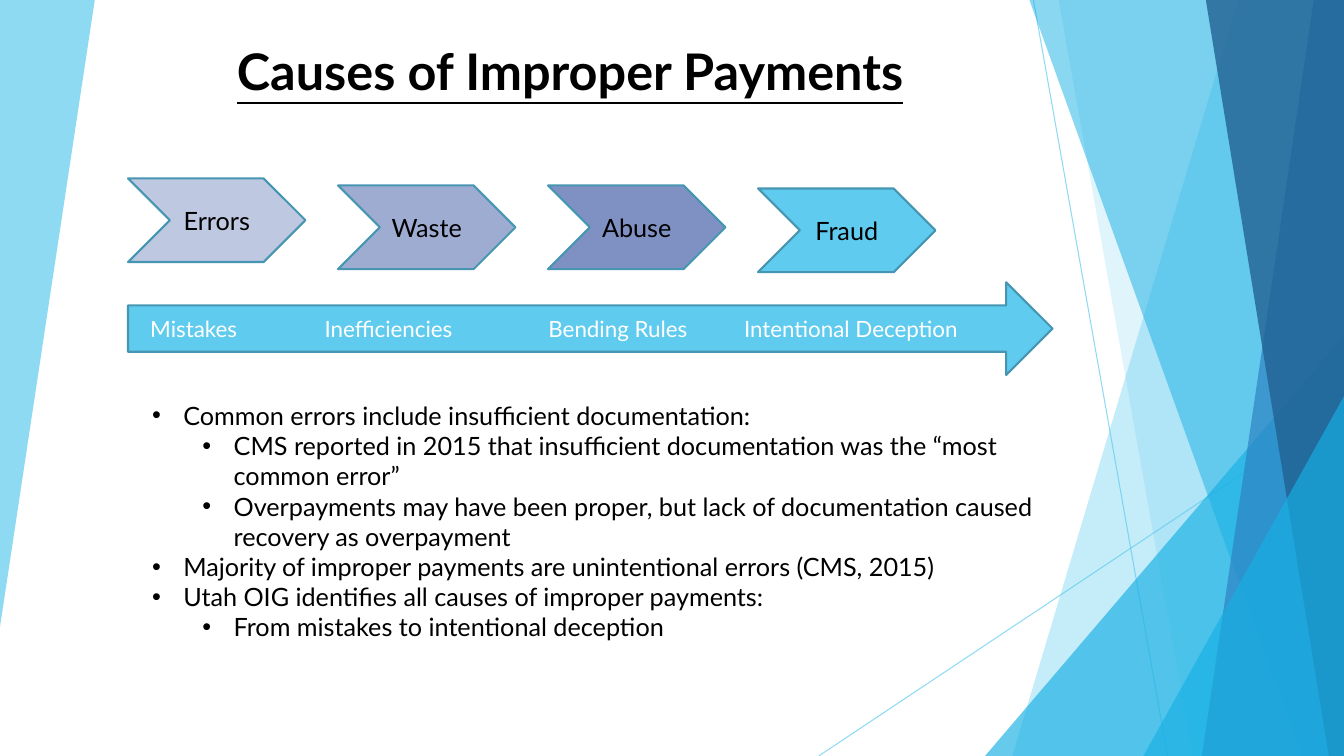
from lxml.etree import SubElement
from pptx import Presentation
from pptx.dml.color import RGBColor
from pptx.enum.shapes import MSO_CONNECTOR, MSO_SHAPE
from pptx.enum.text import MSO_ANCHOR, PP_ALIGN
from pptx.oxml.ns import qn
from pptx.util import Inches, Pt

BLACK = RGBColor(0x00, 0x00, 0x00)
WHITE = RGBColor(0xFF, 0xFF, 0xFF)
SKY = RGBColor(0x5F, 0xCB, 0xEF)
CYAN = RGBColor(0x17, 0xB0, 0xE4)
BLUE = RGBColor(0x2E, 0x83, 0xC3)
NAVY = RGBColor(0x22, 0x62, 0x92)
VIOLET = RGBColor(0x60, 0x76, 0xB4)
OUTLINE = RGBColor(0x46, 0x96, 0xB1)
FONT = "Lato"
W, H = 13.33, 7.5


def set_opacity(shape, percent):
    """Apply opacity to the first colour of the shape: its fill, or a connector's line."""
    color = shape._element.spPr.find(".//" + qn("a:srgbClr"))
    SubElement(color, qn("a:alpha")).set("val", str(percent * 1000))


def style_text(p, size, color):
    for r in p.runs:
        r.font.name = FONT
        r.font.size = Pt(size)
        r.font.color.rgb = color


prs = Presentation()
prs.slide_width, prs.slide_height = Inches(W), Inches(H)
slide = prs.slides.add_slide(prs.slide_layouts[5])
shapes = slide.shapes

# Thin lines behind the facets
for x1, y1, x2, y2 in [(10.25, 0, 11.58, H), (W, 4.03, 8.12, H)]:
    line = shapes.add_connector(
        MSO_CONNECTOR.STRAIGHT, Inches(x1), Inches(y1), Inches(x2), Inches(y2))
    line.line.color.rgb = SKY
    line.line.width = Pt(0.75)
    set_opacity(line, 70)
    SubElement(line._element.spPr, qn("a:effectLst"))

# Translucent facets: each group of polygons is topped by a corner triangle
facet_groups = [
    ([([(0, 0), (0.94, 0), (0, 6.22)], SKY, 70),
      ([(12.28, 0), (W, 0), (W, H), (10.04, H)], SKY, 36),
      ([(10.5, 0), (W, 0), (W, H), (11.83, H)], SKY, 20)],
     (9.77, 3.33)),
    ([([(10.21, 0), (W, 0), (W, H), (12.91, H)], CYAN, 50),
      ([(13.03, 0), (W, 0), (W, H), (11.92, H)], BLUE, 70),
      ([(11.96, 0), (W, 0), (W, H), (13.18, H)], NAVY, 80)],
     (11.34, 3.93)),
]
for polygons, (left, top) in facet_groups:
    facets = []
    for points, color, opacity in polygons:
        start, *rest = [(Inches(x), Inches(y)) for x, y in points]
        builder = shapes.build_freeform(*start)
        builder.add_line_segments(rest, close=True)
        facets.append((builder.convert_to_shape(), color, opacity))
    triangle = shapes.add_shape(
        MSO_SHAPE.ISOSCELES_TRIANGLE,
        Inches(left), Inches(top), Inches(W - left), Inches(H - top))
    triangle.adjustments[0] = 1
    facets.append((triangle, CYAN, 66))
    for sp, color, opacity in facets:
        sp.shadow.inherit = False
        sp.fill.solid()
        sp.fill.fore_color.rgb = color
        sp.line.fill.background()
        set_opacity(sp, opacity)

# Title
title = shapes.title
title.left, title.top = Inches(1.74), Inches(0.34)
title.width, title.height = Inches(7.83), Inches(0.71)
tf = title.text_frame
tf.text = "Causes of Improper Payments"
tf.vertical_anchor = MSO_ANCHOR.MIDDLE
p = tf.paragraphs[0]
p.alignment = PP_ALIGN.CENTER
style_text(p, 36, BLACK)
p.runs[0].font.bold = True
p.runs[0].font.underline = True

# Bulleted explanation
body = shapes.add_textbox(Inches(0.91), Inches(3.92), Inches(9.5), Inches(2.52))
tf = body.text_frame
tf.word_wrap = True
bullets = [
    (0, "Common errors include insufficient documentation:"),
    (1, "CMS reported in 2015 that insufficient documentation was the “most common error”"),
    (1, "Overpayments may have been proper, but lack of documentation caused "
        "recovery as overpayment"),
    (0, "Majority of improper payments are unintentional errors (CMS, 2015)"),
    (0, "Utah OIG identifies all causes of improper payments:"),
    (1, "From mistakes to intentional deception"),
]
for i, (level, text) in enumerate(bullets):
    p = tf.add_paragraph() if i else tf.paragraphs[0]
    p.text = text
    p.level = level
    style_text(p, 18, BLACK)
    pPr = p._p.get_or_add_pPr()
    pPr.set("marL", str(Inches(0.81 + 0.5 * level)))
    pPr.set("indent", str(Inches(-0.31)))
    SubElement(pPr, qn("a:buFont")).set("typeface", "Arial")
    SubElement(pPr, qn("a:buChar")).set("char", "•")

# Chevrons from errors to fraud
causes = [("Errors", 1.77, VIOLET, 40), ("Waste", 1.84, VIOLET, 60),
          ("Abuse", 1.84, VIOLET, 80), ("Fraud", 1.87, SKY, 100)]
steps = []
for i, (cause, top, color, opacity) in enumerate(causes):
    chevron = shapes.add_shape(
        MSO_SHAPE.CHEVRON,
        Inches(1.27 + 2.083 * i), Inches(top), Inches(1.76), Inches(0.83))
    steps.append((chevron, cause, color, opacity, PP_ALIGN.CENTER, 18, BLACK))

# Arrow whose labels sit on tab stops
arrow = shapes.add_shape(
    MSO_SHAPE.RIGHT_ARROW, Inches(1.27), Inches(2.8), Inches(9.17), Inches(0.92))
arrow.text_frame.margin_left = Inches(0.22)
labels = "\t".join(["Mistakes", "Inefficiencies", "Bending Rules", "Intentional Deception"])
steps.append((arrow, labels, SKY, 100, PP_ALIGN.LEFT, 16, WHITE))

for sp, text, color, opacity, alignment, size, text_color in steps:
    sp.shadow.inherit = False
    sp.fill.solid()
    sp.fill.fore_color.rgb = color
    set_opacity(sp, opacity)
    sp.line.color.rgb = OUTLINE
    sp.line.width = Pt(1.5)
    tf = sp.text_frame
    tf.text = text
    tf.vertical_anchor = MSO_ANCHOR.MIDDLE
    p = tf.paragraphs[0]
    p.alignment = alignment
    style_text(p, size, text_color)

tabs = SubElement(arrow.text_frame.paragraphs[0]._p.get_or_add_pPr(), qn("a:tabLst"))
for position in (1.73, 3.95, 5.89):
    tab = SubElement(tabs, qn("a:tab"))
    tab.set("pos", str(Inches(position)))
    tab.set("algn", "l")

prs.save("out.pptx")
